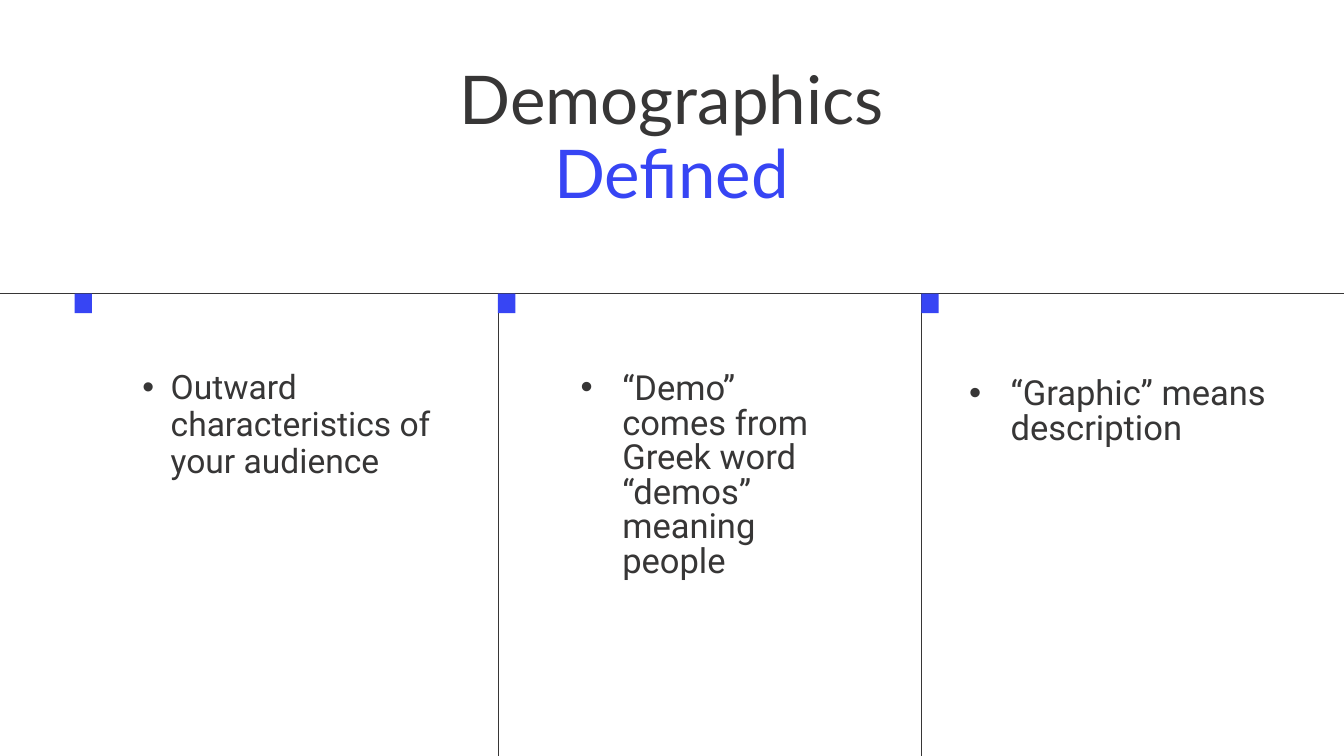
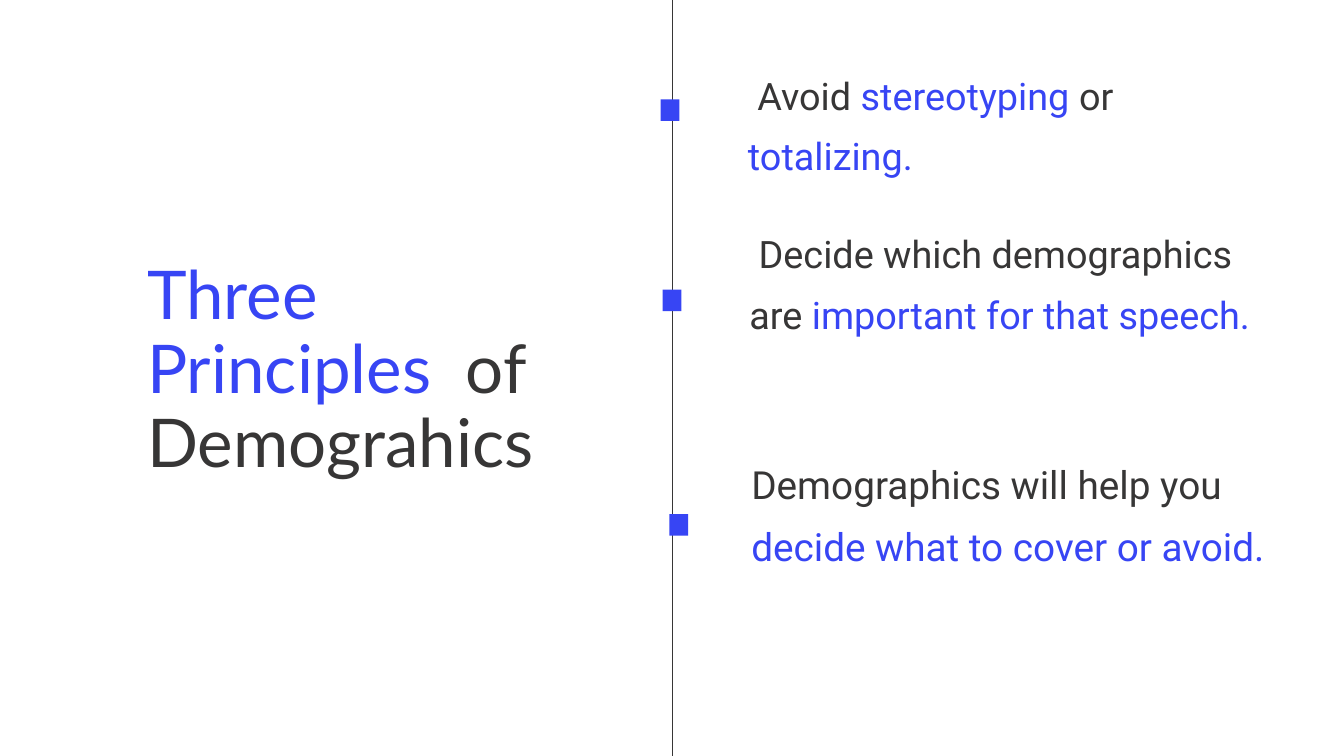
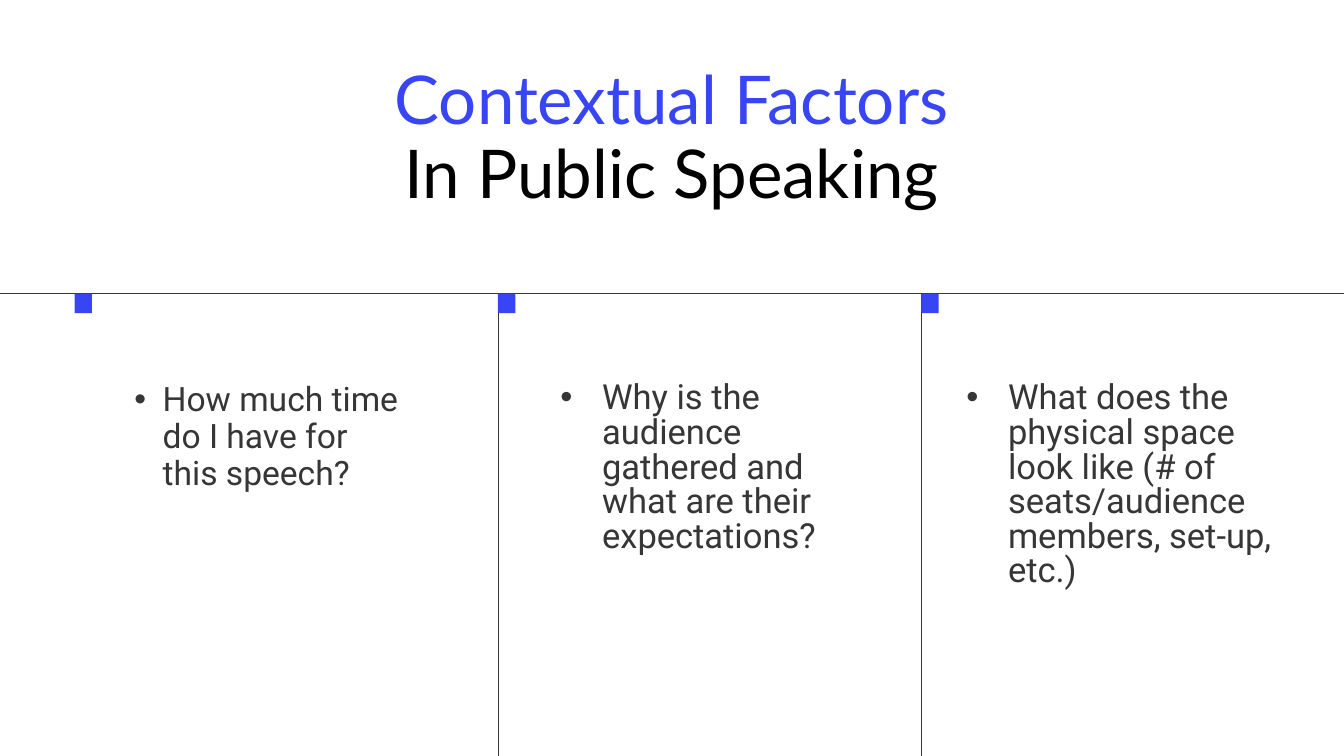
from lxml import etree
from pptx import Presentation
from pptx.dml.color import RGBColor
from pptx.enum.shapes import MSO_CONNECTOR, MSO_SHAPE
from pptx.enum.text import MSO_ANCHOR, MSO_AUTO_SIZE, PP_ALIGN
from pptx.oxml.ns import qn
from pptx.util import Inches, Pt

LEFT, CENTER = PP_ALIGN.LEFT, PP_ALIGN.CENTER
TOP = MSO_ANCHOR.TOP
GROW = MSO_AUTO_SIZE.SHAPE_TO_FIT_TEXT
RECTANGLE, STRAIGHT = MSO_SHAPE.RECTANGLE, MSO_CONNECTOR.STRAIGHT

COLORS = {"ink": "373636", "accent": "3745F4", "black": "000000"}
TITLE_FONT, BODY_FONT = "Lato", "Roboto"
COLUMNS, ROWS = 20, 11.25  # one grid cell is one inch square
TITLE_ONLY, FOUR_BODIES = 5, 4

HEADER_ROW = 4.36
COLUMN_START, COLUMN_STEP = 1.11, 6.3


def color(name):
    return RGBColor.from_string(COLORS[name])


class Deck:
    """Holds the shared style and the slide being filled."""

    def __init__(self):
        self.file = Presentation()
        self.file.slide_width = Inches(COLUMNS)
        self.file.slide_height = Inches(ROWS)
        self.page = None

    def add_page(self, layout):
        self.page = self.file.slides.add_slide(self.file.slide_layouts[layout])

    def place(self, box, left, top, width, height):
        box.left, box.top = Inches(left), Inches(top)
        box.width, box.height = Inches(width), Inches(height)

    def fill_text(self, box, spans, font, size, spacing, align=LEFT):
        """Fill a box with one paragraph of (text, colour) spans."""
        frame = box.text_frame
        frame.word_wrap = True
        frame.auto_size = GROW
        frame.vertical_anchor = TOP
        frame.margin_left = frame.margin_right = 0
        frame.margin_top = frame.margin_bottom = 0
        para = frame.paragraphs[0]
        para.alignment = align
        para.line_spacing = Pt(spacing)
        para.space_before = Pt(0)
        for text, tone in spans:
            for number, line in enumerate(text.split("\n")):
                if number:
                    para.add_line_break()
                if line:
                    span = para.add_run()
                    span.text = line
                    span.font.name = font
                    span.font.size = Pt(size)
                    span.font.bold = False
                    span.font.color.rgb = color(tone)
        return para

    def title(self, area, spans, align=LEFT):
        box = self.page.shapes.title
        self.place(box, *area)
        self.fill_text(box, spans, TITLE_FONT, 72, 79.2, align)

    def bullet(self, box, area, text, size, spacing, indent, hanging, level):
        self.place(box, *area)
        para = self.fill_text(box, [(text, "ink")], BODY_FONT, size, spacing)
        para.level = level
        properties = para._p.get_or_add_pPr()
        properties.set("marL", str(Inches(indent)))
        properties.set("indent", str(-Inches(hanging)))
        etree.SubElement(properties, qn("a:buChar")).set("char", "•")

    def line(self, left, top, right, bottom):
        rule = self.page.shapes.add_connector(
            STRAIGHT, Inches(left), Inches(top), Inches(right), Inches(bottom))
        rule.line.width = Pt(0.75)
        rule.line.color.rgb = color("ink")
        etree.SubElement(rule._element.spPr, qn("a:effectLst"))

    def marker(self, shapes, left, top, width, height):
        square = shapes.add_shape(
            RECTANGLE, Inches(left), Inches(top), Inches(width), Inches(height))
        square.shadow.inherit = False
        square.fill.solid()
        square.fill.fore_color.rgb = color("accent")
        square.line.fill.background()

    def statement(self, area, spans, size, marker_left, marker_top):
        """Group a paragraph with its marker on the centre line."""
        shapes = self.page.shapes.add_group_shape().shapes
        box = shapes.add_textbox(*(Inches(length) for length in area))
        self.fill_text(box, spans, BODY_FONT, size, size * 1.6)
        self.marker(shapes, marker_left, marker_top, 0.28, 0.32)

    def three_columns(self, title_spans, bullets):
        """Build a page with a centred title over three ruled columns."""
        self.add_page(FOUR_BODIES)
        self.title((3.83, 0.96, 12.33, 2.22), title_spans, CENTER)
        self.line(0, HEADER_ROW, COLUMNS, HEADER_ROW)
        bodies = list(self.page.placeholders)[1:]
        for number, (area, text) in enumerate(bullets):
            left = COLUMN_START + number * COLUMN_STEP
            if number:
                self.line(left, HEADER_ROW, left, ROWS)
                style = (37, 37, 0.62, 0.62, 0)
            else:
                style = (36, 39.6, 0.85, 0.42, 1)
            self.marker(self.page.shapes, left, HEADER_ROW + 0.01, 0.26, 0.29)
            self.bullet(bodies[number], area, text, *style)
        for unused in bodies[len(bullets):]:
            unused._element.getparent().remove(unused._element)


def main():
    deck = Deck()

    deck.three_columns(
        [("Demographics\n", "ink"), ("Defined", "accent")],
        [((1.69, 5.5, 5.68, 2.24), "Outward characteristics of your audience"),
         ((8.64, 5.55, 3.84, 3.11),
          "“Demo” comes from Greek word “demos” meaning people"),
         ((14.42, 5.63, 4.98, 1.04), "“Graphic” means description")])

    deck.add_page(TITLE_ONLY)
    deck.line(COLUMNS / 2, 0, COLUMNS / 2, ROWS)
    deck.title((2.19, 3.86, 6.8, 3.32),
               [("Three Principles  ", "accent"), ("of Demograhics", "ink")])
    deck.statement(
        (11.13, 0.85, 7.91, 1.73),
        [(" Avoid ", "ink"), ("stereotyping", "accent"),
         (" or ", "ink"), ("totalizing.", "accent")],
        40.5, 9.83, 1.48)
    deck.statement(
        (11.15, 3.21, 7.91, 2.64),
        [(" Decide which demographics are ", "ink"),
         ("important for that speech.", "accent")],
        40.5, 9.86, 4.31)
    deck.statement(
        (11.18, 6.63, 7.91, 2.68),
        [("Demographics will help you ", "ink"),
         ("decide what to cover or avoid.", "accent")],
        41.5, 9.96, 7.65)

    deck.three_columns(
        [("Contextual Factors\n", "accent"), ("In Public Speaking", "black")],
        [((1.57, 5.68, 5.68, 2.24),
          "How much time\ndo I have for \nthis speech?"),
         ((8.34, 5.69, 4.39, 2.59),
          "Why is the audience gathered and what are their expectations?"),
         ((14.38, 5.69, 4.98, 3.11),
          "What does the physical space look like "
          "(# of seats/audience members, set-up, etc.)")])

    deck.file.save("out.pptx")


if __name__ == "__main__":
    main()
